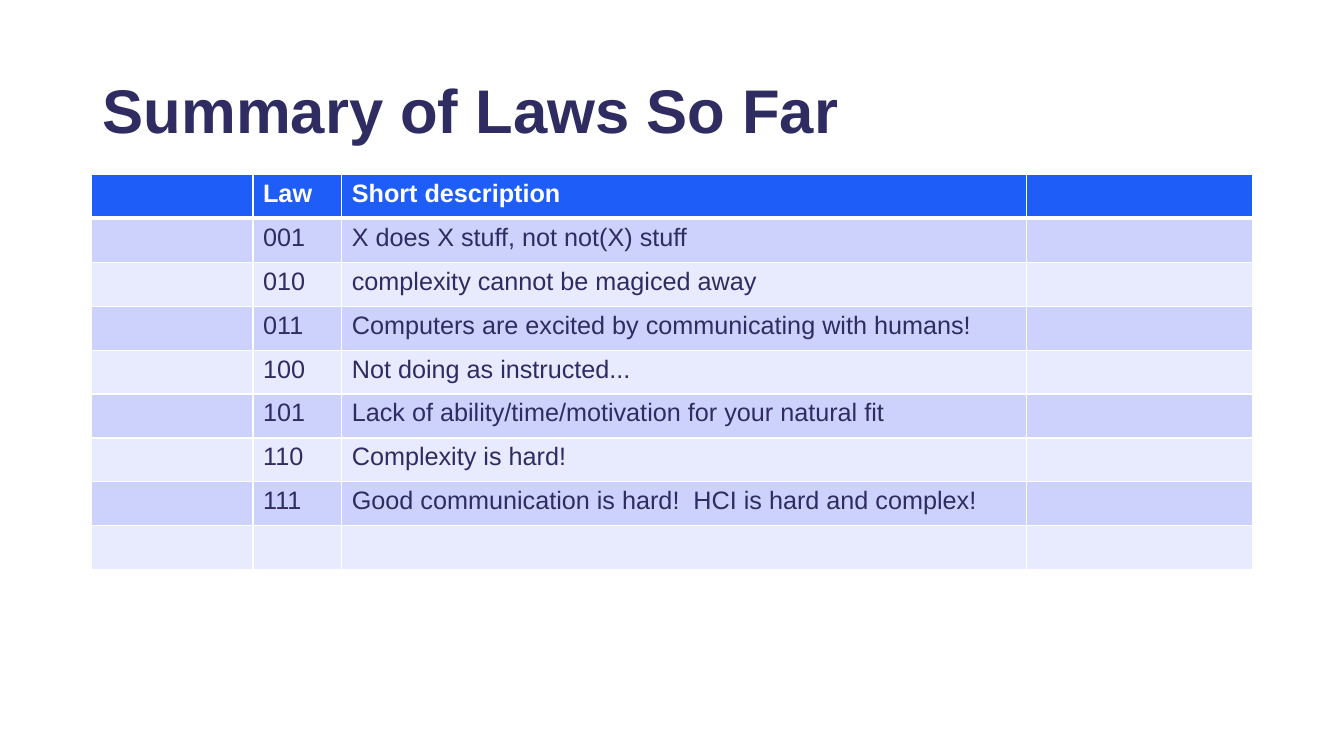
from lxml.etree import SubElement
from pptx import Presentation
from pptx.dml.color import RGBColor
from pptx.enum.text import MSO_ANCHOR
from pptx.oxml.ns import qn
from pptx.util import Inches, Pt

TITLE = "Summary of Laws So Far"
HEADER = ("Law", "Short description")
LAWS = [
    ("001", "X does X stuff, not not(X) stuff"),
    ("010", "complexity cannot be magiced away"),
    ("011", "Computers are excited by communicating with humans!"),
    ("100", "Not doing as instructed..."),
    ("101", "Lack of ability/time/motivation for your natural fit"),
    ("110", "Complexity is hard!"),
    ("111", "Good communication is hard!  HCI is hard and complex!"),
    ("", ""),
]
COLUMN_WIDTHS = (1.6, 0.88, 6.79, 2.24)
ROW_HEIGHT = 0.436
TABLE_LEFT, TABLE_TOP = 0.91, 1.73
NAVY, WHITE, BLUE = "2E2C61", "FFFFFF", "1E5DF8"
BANDS = ("CDD2FC", "E8EAFE")


def style_font(font, size, color, bold):
    font.name, font.size, font.bold = "Arial", Pt(size), bold
    font.color.rgb = RGBColor.from_string(color)


def add_border(cell, side, points):
    line = SubElement(cell._tc.get_or_add_tcPr(), qn(f"a:ln{side}"), w=str(Pt(points)))
    fill = SubElement(line, qn("a:solidFill"))
    SubElement(fill, qn("a:srgbClr"), val=WHITE)


def add_title(slide):
    box = slide.shapes.add_textbox(Inches(0.92), Inches(0.4), Inches(11.5), Inches(1.45))
    frame = box.text_frame
    frame.word_wrap = True
    frame.vertical_anchor = MSO_ANCHOR.MIDDLE
    frame.text = TITLE
    paragraph = frame.paragraphs[0]
    paragraph.line_spacing = 0.9
    style_font(paragraph.runs[0].font, 44, NAVY, True)


def add_laws_table(slide):
    rows = [HEADER] + LAWS
    table = slide.shapes.add_table(
        len(rows), len(COLUMN_WIDTHS), Inches(TABLE_LEFT), Inches(TABLE_TOP),
        Inches(sum(COLUMN_WIDTHS)), Inches(ROW_HEIGHT * len(rows))).table
    for column, width in zip(table.columns, COLUMN_WIDTHS):
        column.width = Inches(width)
    for row_index, (number, description) in enumerate(rows):
        is_header = row_index == 0
        table.rows[row_index].height = Inches(ROW_HEIGHT)
        background = BLUE if is_header else BANDS[(row_index - 1) % 2]
        borders = {"L": 1, "R": 1, "T": 3 if row_index == 1 else 1, "B": 3 if is_header else 1}
        for column_index, text in enumerate(("", number, description, "")):
            cell = table.cell(row_index, column_index)
            for side, points in borders.items():
                add_border(cell, side, points)
            cell.fill.solid()
            cell.fill.fore_color.rgb = RGBColor.from_string(background)
            cell.text_frame.text = text
            style_font(cell.text_frame.paragraphs[0].font, 18,
                       WHITE if is_header else NAVY, is_header)


def main():
    """Build the slide that sums up the laws in a table."""
    presentation = Presentation()
    presentation.slide_width, presentation.slide_height = Inches(13.33), Inches(7.5)
    slide = presentation.slides.add_slide(presentation.slide_layouts[6])
    add_title(slide)
    add_laws_table(slide)
    presentation.save("out.pptx")


if __name__ == "__main__":
    main()
